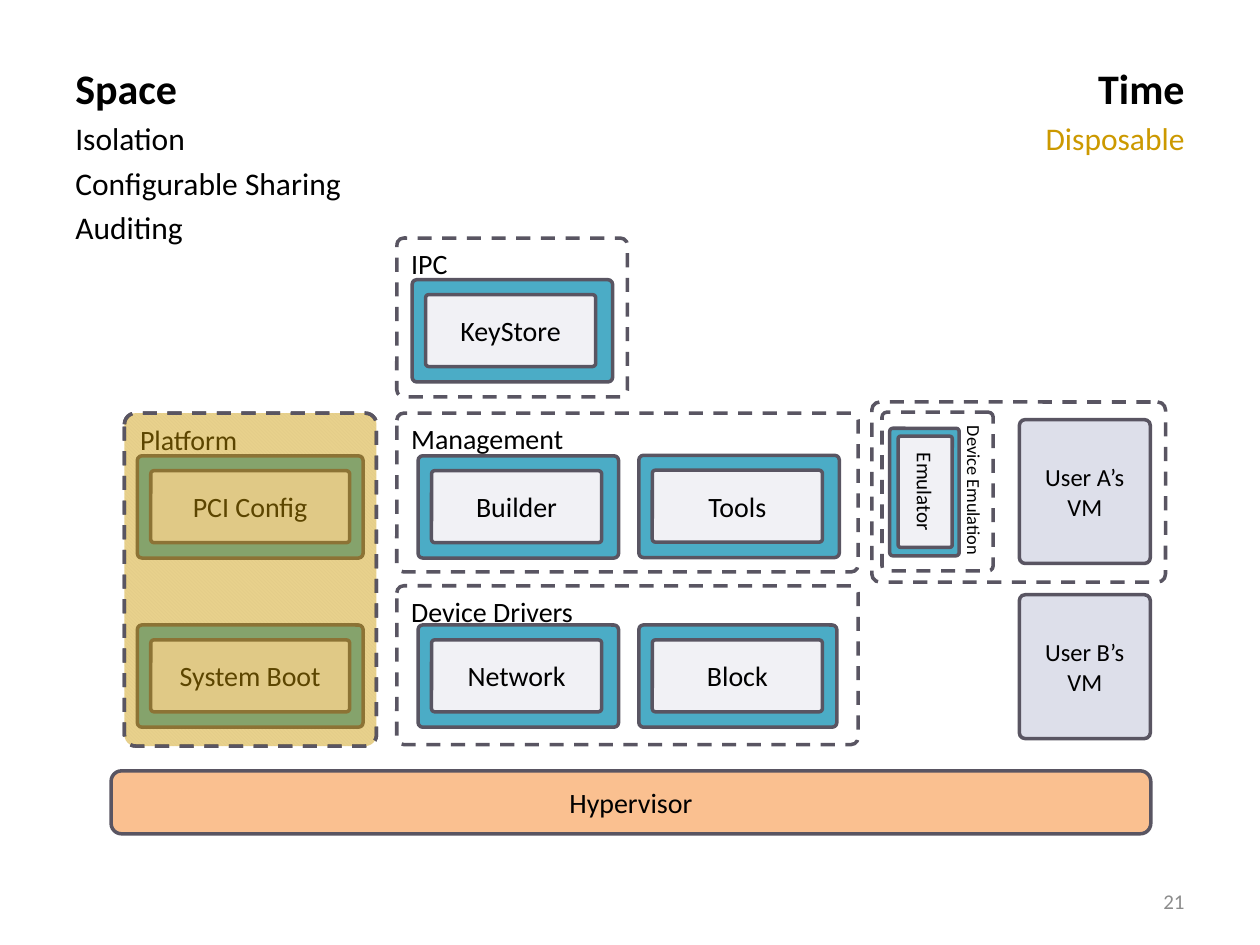
import pptx
import pptx.util
import pptx.dml.color
import pptx.enum.dml
import pptx.enum.shapes
import pptx.enum.text
import pptx.oxml
import pptx.oxml.ns

Cm, Pt = pptx.util.Cm, pptx.util.Pt
RGBColor = pptx.dml.color.RGBColor
ALIGN = pptx.enum.text.PP_ALIGN
ANCHOR = pptx.enum.text.MSO_ANCHOR

BLACK = RGBColor(0x00, 0x00, 0x00)
WHITE = RGBColor(0xFF, 0xFF, 0xFF)
GREY = RGBColor(0x8C, 0x8C, 0x8C)
OUTLINE = RGBColor(0x59, 0x55, 0x62)
ORANGE = RGBColor(0xFA, 0xC0, 0x90)
LAVENDER = RGBColor(0xDD, 0xDF, 0xEA)
PALE = RGBColor(0xF1, 0xF1, 0xF5)
TEAL = RGBColor(0x4B, 0xAC, 0xC6)
GOLD = RGBColor(0xCC, 0x99, 0x00)

# Content: all lengths in centimetres
LEFT_HEADING = ("Space", ["Isolation", "Configurable Sharing", "Auditing"])
RIGHT_HEADING = ("Time", ["Disposable"])
USER_VMS = [("User A’s VM", 8.46), ("User B’s VM", 11.99)]
PLATFORM = (2.51, 8.33, 5.08, 6.71)
GROUPS = [  # label, left, top, width
    ("Device Drivers", 8, 11.81, 9.3),
    ("Management", 8, 8.33, 9.3),
    ("IPC", 8, 4.8, 4.65),
]
GROUP_HEIGHT = 3.2
MODULES = [  # label, left, top, width, width of the core
    ("System Boot", 2.77, 12.6, 4.55, 4.01),
    ("PCI Config", 2.77, 9.19, 4.55, 4.01),
    ("Network", 8.43, 12.6, 4.04, 3.43),
    ("Block", 12.88, 12.6, 3.99, 3.43),
    ("Builder", 8.43, 9.19, 4.04, 3.43),
    ("Tools", 12.88, 9.18, 4.04, 3.43),
    ("KeyStore", 8.31, 5.64, 4.04, 3.43),
]
MODULE_HEIGHT, CORE_HEIGHT = 2.06, 1.45
CORE_INSET = (0.27, 0.3)
SMALL_RADIUS = 0.044

deck = pptx.Presentation()
deck.slide_width, deck.slide_height = Cm(25.4), Cm(19.05)
page = deck.slides.add_slide(deck.slide_layouts[6])


def write(paragraph, text, size, color=BLACK, bold=False):
    span = paragraph.add_run()
    span.text = text
    span.font.name = "Calibri"
    span.font.size = Pt(size)
    span.font.bold = bold
    span.font.color.rgb = color


def add_box(frame, fill=None, text="", size=16, label=False, dashed=False,
            radius=SMALL_RADIUS, turned=False):
    """Rounded box; a label sits top left, other text is centred."""
    kind = pptx.enum.shapes.MSO_SHAPE.ROUNDED_RECTANGLE
    box = page.shapes.add_shape(kind, *map(Cm, frame))
    box.shadow.inherit = False
    box.adjustments[0] = radius
    box.rotation = 90 if turned else 0
    if fill is None:
        box.fill.background()
    else:
        box.fill.solid()
        box.fill.fore_color.rgb = fill
    box.line.color.rgb = OUTLINE
    box.line.width = Pt(2)
    if dashed:
        box.line.dash_style = pptx.enum.dml.MSO_LINE.DASH
    if text:
        box.text_frame.vertical_anchor = ANCHOR.TOP if label else ANCHOR.MIDDLE
        paragraph = box.text_frame.paragraphs[0]
        paragraph.alignment = ALIGN.LEFT if label else ALIGN.CENTER
        write(paragraph, text, size)
    return box


def add_text_box(frame):
    box = page.shapes.add_textbox(*map(Cm, frame))
    box.text_frame.word_wrap = True
    return box.text_frame


def add_heading(frame, content, alignment, color):
    title, items = content
    body = add_text_box(frame)
    body.paragraphs[0].alignment = alignment
    write(body.paragraphs[0], title, 24, bold=True)
    for item in items:
        paragraph = body.add_paragraph()
        paragraph.alignment = alignment
        paragraph.space_before = Pt(3.6)
        write(paragraph, item, 18, color)


# Slide number
number = add_text_box((18.21, 17.65, 5.92, 1.02))
number.vertical_anchor = ANCHOR.MIDDLE
number.paragraphs[0].alignment = ALIGN.RIGHT
write(number.paragraphs[0], "21", 12, GREY)

# Hypervisor and user machines
add_box((2.24, 15.54, 20.96, 1.27), ORANGE, "Hypervisor", radius=0.167)
for name, top in USER_VMS:
    add_box((20.55, top, 2.64, 2.9), LAVENDER, name, size=14)

# Dashed groups
platform = add_box(PLATFORM, text="Platform", label=True, dashed=True)
platform.fill.patterned()
platform.fill.pattern = pptx.enum.dml.MSO_PATTERN.DARK_DOWNWARD_DIAGONAL
platform.fill.fore_color.rgb = PALE
platform.fill.back_color.rgb = WHITE
for name, left, top, width in GROUPS:
    add_box((left, top, width, GROUP_HEIGHT), text=name, label=True, dashed=True)
add_box((17.3, 8.79, 3.2, 2.24), text="Device Emulation", size=10.5,
        label=True, dashed=True, turned=True)

# Modules: a teal frame around a pale core
for name, left, top, width, core_width in MODULES:
    add_box((left, top, width, MODULE_HEIGHT), TEAL)
    add_box((left + CORE_INSET[0], top + CORE_INSET[1], core_width, CORE_HEIGHT),
            PALE, name)
add_box((17.35, 9.22, 2.57, 1.4), TEAL, turned=True)
add_box((17.53, 9.37, 2.24, 1.09), PALE, "Emulator", size=12, turned=True)

# Boundary around user A and its emulator
add_box((18.72, 6.96, 3.63, 5.92), dashed=True, turned=True)

# Translucent highlight over the platform
highlight = add_box(PLATFORM, GOLD, dashed=True)
solid = highlight.fill._xPr.find(pptx.oxml.ns.qn("a:solidFill"))
solid[0].append(pptx.oxml.parse_xml(
    '<a:alpha %s val="45000"/>' % pptx.oxml.ns.nsdecls("a")))

# Headings
add_heading((1.27, 1.14, 11.38, 4.14), LEFT_HEADING, ALIGN.LEFT, BLACK)
add_heading((12.67, 1.14, 11.46, 4.14), RIGHT_HEADING, ALIGN.RIGHT, GOLD)

deck.save("out.pptx")
